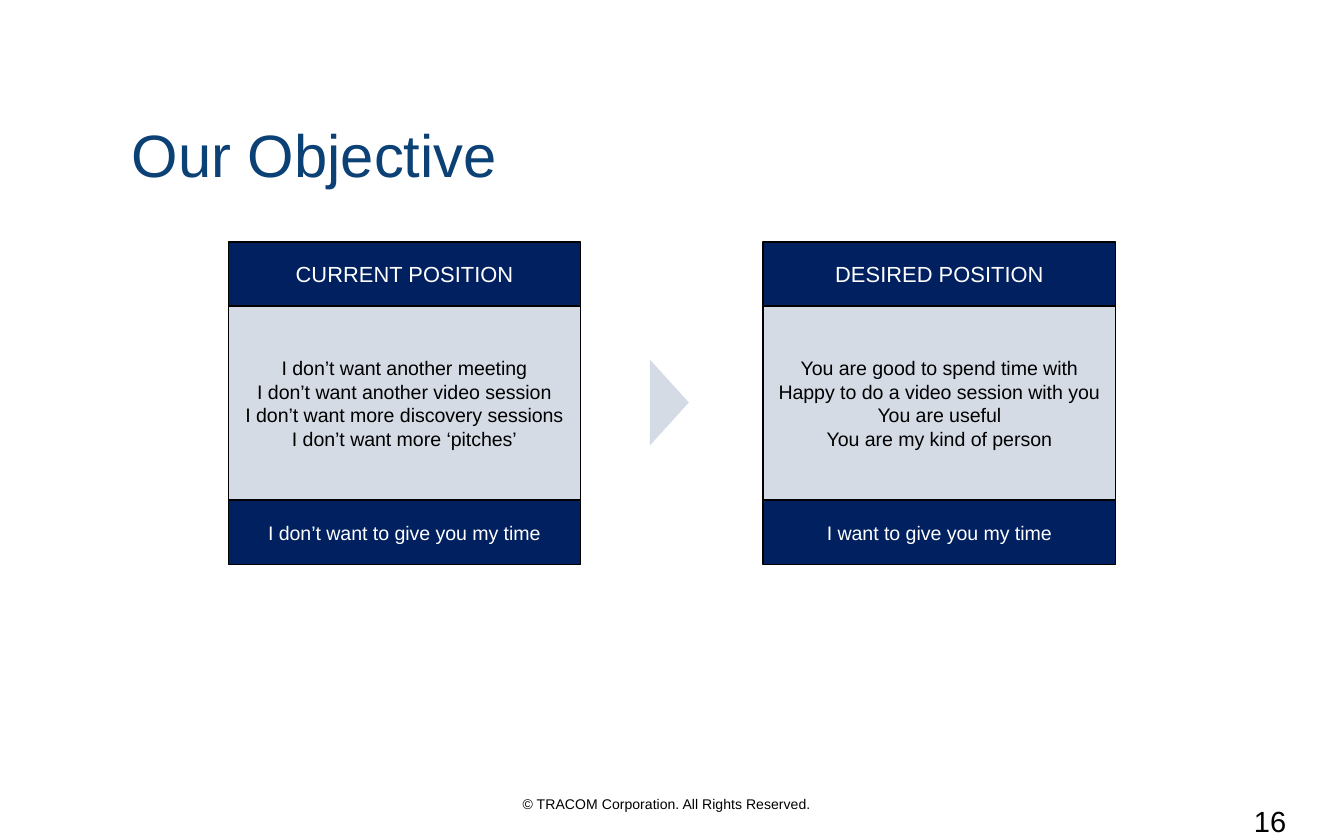
"""Build the "Our Objective" slide: current position against desired position."""
from pptx import Presentation
from pptx.dml.color import RGBColor
from pptx.enum.shapes import MSO_SHAPE
from pptx.enum.text import MSO_ANCHOR, PP_ALIGN
from pptx.util import Inches, Pt

RECT, ARROW = MSO_SHAPE.RECTANGLE, MSO_SHAPE.ISOSCELES_TRIANGLE
TOP, MID = MSO_ANCHOR.TOP, MSO_ANCHOR.MIDDLE
LEFT, CENTER = PP_ALIGN.LEFT, PP_ALIGN.CENTER
NAVY, PALE, BLUE, BLACK, WHITE = "002060", "D5DBE5", "0C4176", "000000", "FFFFFF"


def tint(color, value):
    color.rgb = RGBColor.from_string(value)


def write(shape, text, size=10.5, color=BLACK, align=CENTER, anchor=TOP, inset=(0.1, 0.05)):
    frame = shape.text_frame
    frame.word_wrap = True
    frame.vertical_anchor = anchor
    frame.margin_left = frame.margin_right = Inches(inset[0])
    frame.margin_top = frame.margin_bottom = Inches(inset[1])
    frame.text = text
    for para in frame.paragraphs:
        para.alignment = align
        para.font.name = "Arial"
        para.font.size = Pt(size)
        tint(para.font.color, color)


deck = Presentation()
deck.slide_width, deck.slide_height = Inches(10), Inches(6.25)
slide = deck.slides.add_slide(deck.slide_layouts[5])
shapes = slide.shapes

title = shapes.title
title.left, title.top = Inches(0.88), Inches(0.83)
title.width, title.height = Inches(6.48), Inches(1.06)
write(title, "Our Objective", size=32, color=BLUE, align=LEFT)

columns = [
    (1.7, "CURRENT POSITION",
     ["I don’t want another meeting",
      "I don’t want another video session",
      "I don’t want more discovery sessions",
      "I don’t want more ‘pitches’"],
     "I don’t want to give you my time"),
    (5.68, "DESIRED POSITION",
     ["You are good to spend time with",
      "Happy to do a video session with you",
      "You are useful",
      "You are my kind of person"],
     "I want to give you my time"),
]
for left, head, points, result in columns:
    group = shapes.add_group_shape()
    top = 1.8
    for text, height, size, fill, color in [
        (head, 0.48, 11.7, NAVY, WHITE),
        ("\n".join(points), 1.44, 10.5, PALE, BLACK),
        (result, 0.48, 10.5, NAVY, WHITE),
    ]:
        box = group.shapes.add_shape(RECT, Inches(left), Inches(top), Inches(2.62), Inches(height))
        box.shadow.inherit = False
        box.fill.solid()
        tint(box.fill.fore_color, fill)
        tint(box.line.color, BLACK)
        box.line.width = Pt(1)
        write(box, text, size=size, color=color, anchor=MID, inset=(0.07, 0.04))
        top += height

arrow = shapes.add_shape(ARROW, Inches(4.66), Inches(2.85), Inches(0.64), Inches(0.29))
arrow.rotation = 90
arrow.shadow.inherit = False
arrow.fill.solid()
tint(arrow.fill.fore_color, PALE)
arrow.line.fill.background()

footer = shapes.add_textbox(Inches(3.26), Inches(5.87), Inches(3.4), Inches(0.23))
write(footer, "© TRACOM Corporation. All Rights Reserved.", size=7.5)

number = shapes.add_textbox(Inches(9.07), Inches(5.93), Inches(0.76), Inches(0.33))
write(number, "16", size=15.6)

deck.save("out.pptx")
